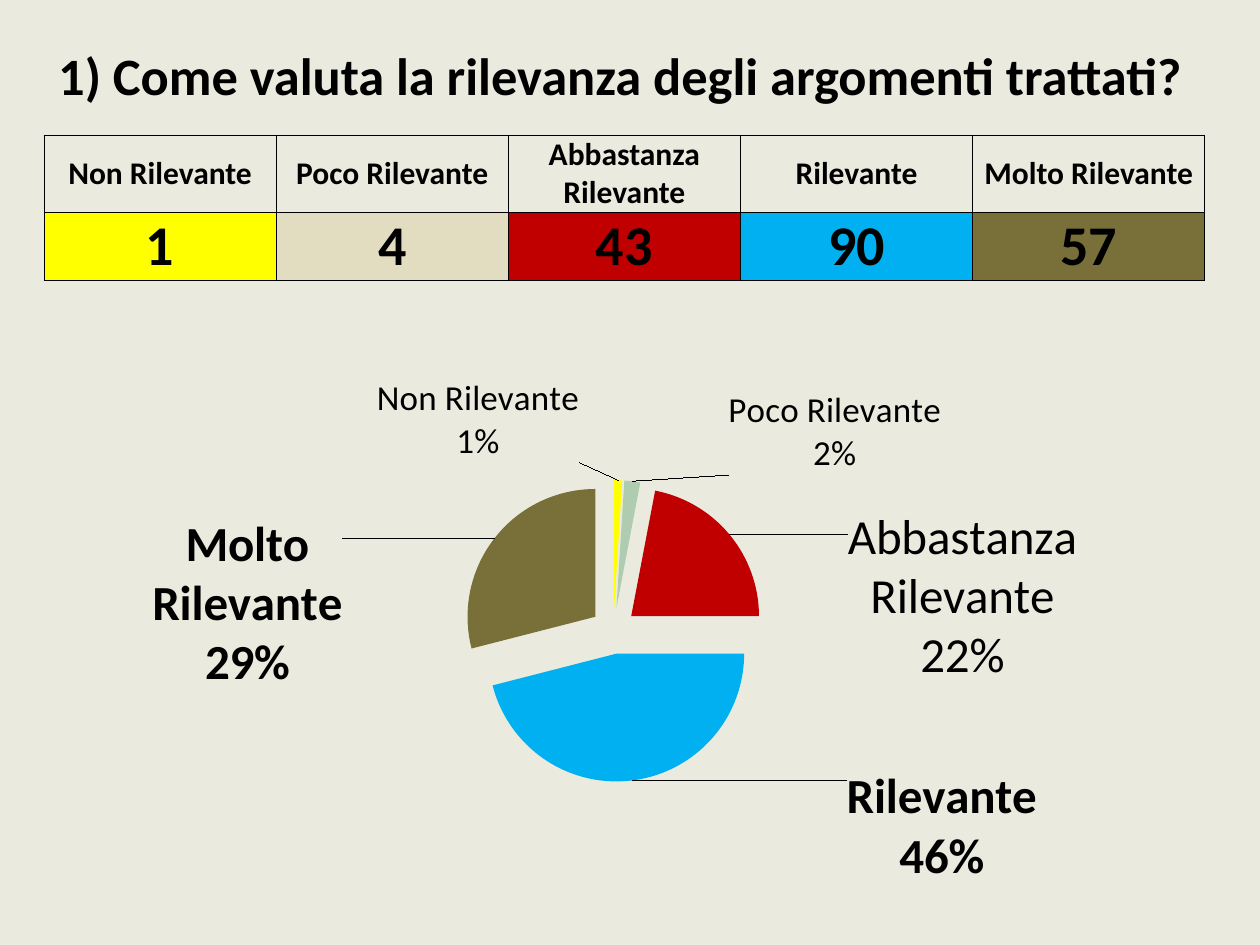
from lxml import etree
from pptx import Presentation
from pptx import util as u
from pptx.chart.data import CategoryChartData
from pptx.dml.color import RGBColor
from pptx.enum import chart as ch, text
from pptx.oxml import parse_xml
from pptx.oxml.ns import nsdecls, qn

# Content
QUESTION = "1) Come valuta la rilevanza degli argomenti trattati?"
COLORS = {"background": "EAEBDE", "ink": "000000", "yellow": "FFFF00",
          "sand": "E2DCC1", "sage": "B0CCB0", "red": "C00000",
          "blue": "00B0F0", "olive": "796F39"}
# answer, votes, percent, cell colour, slice colour
ANSWERS = [
    ("Non Rilevante", 1, 1, "yellow", "yellow"),
    ("Poco Rilevante", 4, 2, "sand", "sage"),
    ("Abbastanza Rilevante", 43, 22, "red", "red"),
    ("Rilevante", 90, 46, "blue", "blue"),
    ("Molto Rilevante", 57, 29, "olive", "olive"),
]
# label size in points, bold, typed text, shift from its slice in px
LABELS = [(20, False, True, -140, -10), (20, False, True, 95, 1),
          (28, False, True, 112, 156), (28, True, False, 214, -20),
          (28, True, False, -146, 159)]

# Geometry in px
SCALE = 914400 // 126
TITLE_BOX = (25, 45, 1191, 62)
TABLE_BOX = (44, 135, 1161, 145)
ROW_HEIGHTS = (77, 68)
CHART_BOX = (44, 324, 1160, 602)
PIE_BOX = (463, 480, 302, 302)


def emu(box):
    return [u.Emu(px * SCALE) for px in box]


def color(name):
    return RGBColor.from_string(COLORS[name])


def style_font(font, size, bold):
    font.name, font.size, font.bold = "Calibri", u.Pt(size), bold
    font.color.rgb = color("ink")


def add_plain_table(page, rows, columns, box):
    table = page.shapes.add_table(rows, columns, *emu(box)).table
    table.first_row = table.horz_banding = False
    return table


def fill_cell(cell, content, size, fill=None, line="<a:solidFill>"
              f'<a:srgbClr val="{COLORS["ink"]}"/></a:solidFill>'):
    cell.text = content
    para = cell.text_frame.paragraphs[0]
    para.alignment = text.PP_ALIGN.CENTER
    style_font(para.runs[0].font, size, True)
    cell.vertical_anchor = text.MSO_ANCHOR.MIDDLE
    cell.margin_left = cell.margin_right = cell.margin_top = cell.margin_bottom = 0
    for side in ("lnL", "lnR", "lnT", "lnB"):
        cell._tc.get_or_add_tcPr().append(parse_xml(
            f'<a:{side} {nsdecls("a")} w="6350">{line}</a:{side}>'))
    if fill:
        cell.fill.solid()
        cell.fill.fore_color.rgb = color(fill)
    else:
        cell.fill.background()


def manual_layout(values, inner=False):
    target = '<c:layoutTarget val="inner"/>' if inner else ""
    modes = '<c:xMode val="edge"/><c:yMode val="edge"/>' if inner else ""
    parts = "".join(f'<c:{key} val="{value:.3f}"/>' for key, value in zip("xywh", values))
    return parse_xml(f'<c:layout {nsdecls("c")}><c:manualLayout>{target}{modes}'
                     f'{parts}</c:manualLayout></c:layout>')


def show_category_and_percent(element):
    for flag, shown in (("showVal", "0"), ("showCatName", "1"), ("showPercent", "1")):
        element.find(qn(f"c:{flag}")).set("val", shown)
    separator = etree.Element(qn("c:separator"))
    separator.text = "\n"
    element.find(qn("c:showBubbleSize")).addnext(separator)


deck = Presentation()
deck.slide_width, deck.slide_height = u.Inches(10), u.Inches(7.5)
page = deck.slides.add_slide(deck.slide_layouts[6])
page.background.fill.solid()
page.background.fill.fore_color.rgb = color("background")

# Question
heading = add_plain_table(page, 1, 1, TITLE_BOX)
fill_cell(heading.cell(0, 0), QUESTION, 30, line="<a:noFill/>")

# Votes table
table = add_plain_table(page, 2, len(ANSWERS), TABLE_BOX)
for row, height in zip(table.rows, ROW_HEIGHTS):
    row.height = u.Emu(height * SCALE)
for column, (answer, votes, _, cell_color, _) in enumerate(ANSWERS):
    fill_cell(table.cell(0, column), answer, 18)
    fill_cell(table.cell(1, column), str(votes), 32, cell_color)

# Pie chart
data = CategoryChartData()
data.categories = [answer[0] for answer in ANSWERS]
data.add_series("Series 1", [answer[2] for answer in ANSWERS])
chart = page.shapes.add_chart(ch.XL_CHART_TYPE.PIE, *emu(CHART_BOX), data).chart
chart.has_title = chart.has_legend = False
style_font(chart.font, 10, False)
left, top, width, height = CHART_BOX
pie_left, pie_top, pie_width, pie_height = PIE_BOX
area = chart._chartSpace.chart.plotArea
for old in area.findall(qn("c:layout")):
    area.remove(old)
area.insert(0, manual_layout(((pie_left - left) / width, (pie_top - top) / height,
                              pie_width / width, pie_height / height), inner=True))

plot = chart.plots[0]
plot.vary_by_categories = True
series = plot.series[0]
for index, answer in enumerate(ANSWERS):
    point = series.points[index]
    point.format.fill.solid()
    point.format.fill.fore_color.rgb = color(answer[4])

# Slice labels
labels = series.data_labels
style_font(labels.font, 28, True)
labels.position = ch.XL_LABEL_POSITION.OUTSIDE_END
show_category_and_percent(labels._element)
for index, (size, bold, typed, shift_x, shift_y) in enumerate(LABELS):
    label = series.points[index].data_label
    if typed:
        label.text_frame.text = f"{ANSWERS[index][0]}\n{ANSWERS[index][2]}%"
        for para in label.text_frame.paragraphs:
            style_font(para.runs[0].font, size, bold)
    else:
        style_font(label.font, size, bold)
    label.position = ch.XL_LABEL_POSITION.OUTSIDE_END
    element = labels._element.findall(qn("c:dLbl"))[index]
    element.find(qn("c:idx")).addnext(manual_layout((shift_x / width, shift_y / height)))
    show_category_and_percent(element)

# Exploded slices
explosion = etree.Element(qn("c:explosion"), val="18")
series._element.find(qn("c:dPt")).addprevious(explosion)

deck.save("out.pptx")
